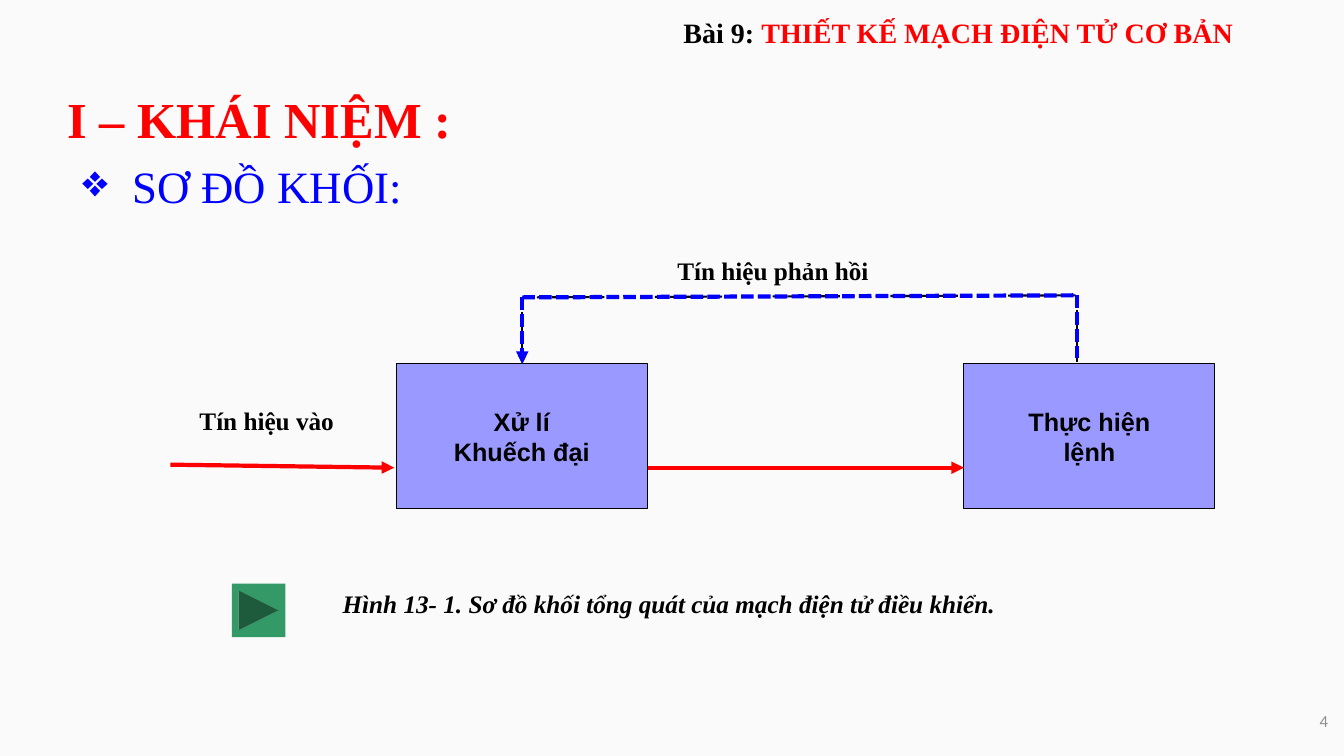
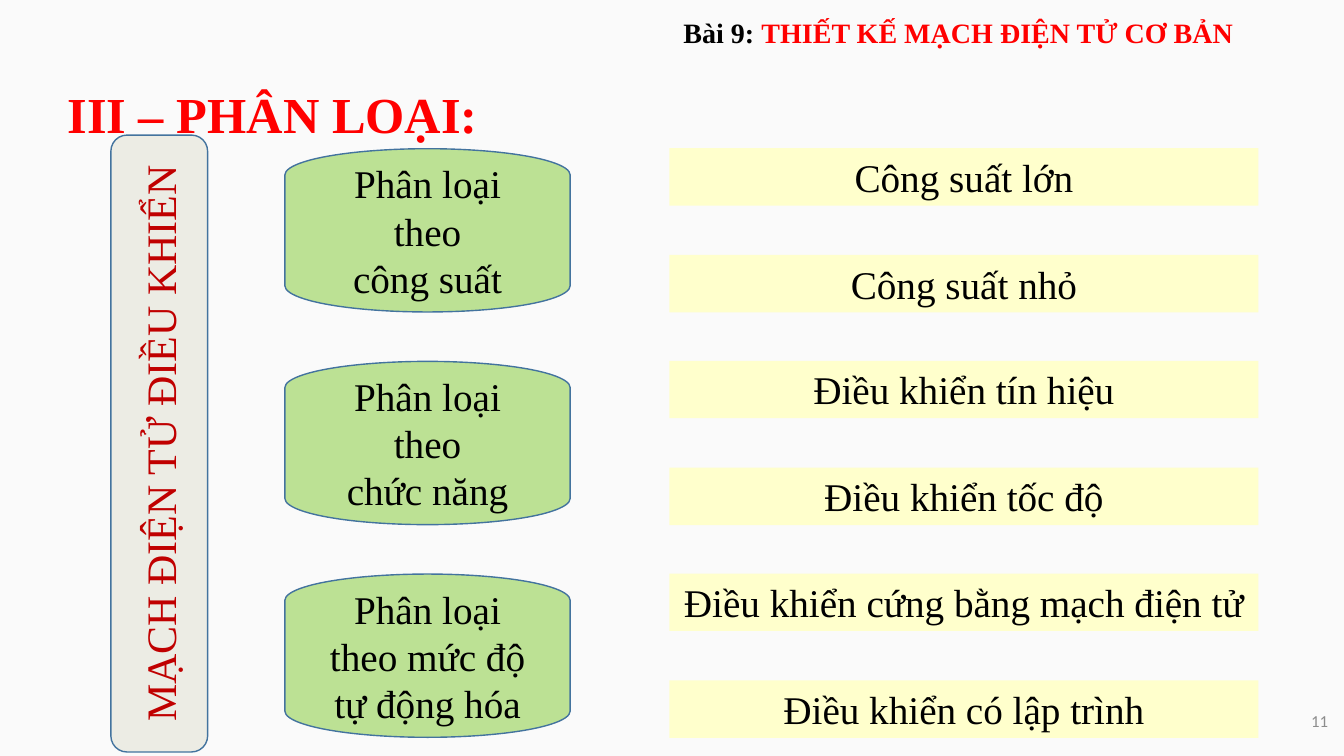
from dataclasses import dataclass

import pptx
import pptx.dml.color
import pptx.enum.dml
import pptx.enum.shapes
import pptx.enum.text
import pptx.oxml.ns
import pptx.presentation
import pptx.shapes.autoshape
import pptx.slide
import pptx.text.text
import pptx.util
from lxml import etree

RGB = pptx.dml.color.RGBColor
Pt = pptx.util.Pt
SHAPE = pptx.enum.shapes.MSO_SHAPE
ALIGN = pptx.enum.text.PP_ALIGN
ANCHOR = pptx.enum.text.MSO_ANCHOR
DASH = pptx.enum.dml.MSO_LINE
qn = pptx.oxml.ns.qn

PX = 9144  # EMU; 100 px to the inch

BACKGROUND = RGB(0xFA, 0xFA, 0xFA)
BLACK = RGB(0x00, 0x00, 0x00)
RED = RGB(0xFF, 0x00, 0x00)
DARK_RED = RGB(0xC0, 0x00, 0x00)
BLUE = RGB(0x00, 0x00, 0xFF)
GRAY = RGB(0x8C, 0x8C, 0x8C)
LAVENDER = RGB(0x99, 0x99, 0xFF)
BUTTON_GREEN = RGB(0x33, 0x99, 0x66)
LIGHT_GREEN = RGB(0xBC, 0xE1, 0x94)
STONE = RGB(0xEC, 0xEC, 0xE4)
PALE_YELLOW = RGB(0xFF, 0xFF, 0xCC)
OUTLINE_BLUE = RGB(0x43, 0x73, 0x9E)

SERIF = "Times New Roman"
TITLE = dict(name=SERIF, size=Pt(36), bold=True)
SUBTITLE = dict(name=SERIF, size=Pt(32))
LESSON = dict(name=SERIF, size=Pt(20), bold=True)
LABEL = dict(name=SERIF, size=Pt(18), bold=True)
CAPTION = LABEL | dict(italic=True)
BLOCK = dict(name="Arial", size=Pt(18), bold=True)
CLASS = dict(name=SERIF, size=Pt(28))
SUBJECT = dict(name=SERIF, size=Pt(30))
PAGE = dict(name="Calibri", size=Pt(12))


@dataclass(frozen=True)
class Box:
    left: int
    top: int
    width: int
    height: int

    def emu(self) -> list[int]:
        return [v * PX for v in (self.left, self.top, self.width, self.height)]


@dataclass(frozen=True)
class Signal:
    start: tuple[int, int]
    end: tuple[int, int]
    arrow: bool = False


@dataclass(frozen=True)
class Stroke:
    color: RGB
    width: float
    dash: DASH | None = None


@dataclass(frozen=True)
class Classification:
    basis: list[str]
    kinds: list[str]


THIN_BLACK = Stroke(BLACK, 0.75)
THIN_BLUE = Stroke(OUTLINE_BLUE, 1)
RED_SIGNAL = Stroke(RED, 3)
FEEDBACK_STROKES = [Stroke(BLACK, 1.5, DASH.DASH), Stroke(BLUE, 3, DASH.SQUARE_DOT)]

INPUT_SIGNALS = [
    Signal((169, 461), (391, 464), True),
    Signal((643, 464), (956, 464), True),
]
FEEDBACK_PATH = [
    Signal((518, 295), (1068, 293)),
    Signal((518, 295), (518, 361), True),
    Signal((1068, 293), (1068, 359)),
]
BLOCKS = [
    (Box(393, 361, 249, 144), ["Xử lí", "Khuếch đại"]),
    (Box(956, 361, 249, 144), ["Thực hiện", "lệnh"]),
]
LABELS = [
    (Box(188, 397, 188, 40), "Tín hiệu vào", LABEL),
    (Box(662, 248, 213, 40), "Tín hiệu phản hồi", LABEL),
    (Box(330, 579, 770, 40), "Hình 13- 1. Sơ đồ khối tổng quát của mạch điện tử điều khiển.", CAPTION),
]
CLASSIFICATIONS = [
    Classification(["Phân loại", "theo", "công suất"],
                   ["Công suất lớn", "Công suất nhỏ"]),
    Classification(["Phân loại", "theo", "chức năng"],
                   ["Điều khiển tín hiệu", "Điều khiển tốc độ"]),
    Classification(["Phân loại", "theo mức độ", "tự động hóa"],
                   ["Điều khiển cứng bằng mạch điện tử", "Điều khiển có lập trình"]),
]
GROUP_PITCH = 211
KIND_PITCH = 106


def add_run(paragraph: pptx.text.text._Paragraph, words: str, style: dict, color: RGB) -> None:
    run = paragraph.add_run()
    run.text = words
    for attribute, value in style.items():
        setattr(run.font, attribute, value)
    run.font.color.rgb = color


def write(frame: pptx.text.text.TextFrame, lines: list[str], style: dict, color: RGB = BLACK,
          align: ALIGN = ALIGN.LEFT, anchor: ANCHOR = ANCHOR.TOP, wrap: bool = True) -> None:
    frame.word_wrap = wrap
    frame.vertical_anchor = anchor
    for i, line in enumerate(lines):
        paragraph = frame.add_paragraph() if i else frame.paragraphs[0]
        paragraph.alignment = align
        add_run(paragraph, line, style, color)


def add_text_frame(slide: pptx.slide.Slide, box: Box) -> pptx.text.text.TextFrame:
    return slide.shapes.add_textbox(*box.emu()).text_frame


def add_figure(slide: pptx.slide.Slide, kind: SHAPE, box: Box, fill: RGB,
               outline: Stroke | None = None) -> pptx.shapes.autoshape.Shape:
    figure = slide.shapes.add_shape(kind, *box.emu())
    figure.shadow.inherit = False
    figure.fill.solid()
    figure.fill.fore_color.rgb = fill
    if outline:
        figure.line.color.rgb = outline.color
        figure.line.width = Pt(outline.width)
    else:
        figure.line.fill.background()
    return figure


def add_signal(slide: pptx.slide.Slide, signal: Signal, stroke: Stroke) -> None:
    ends = [v * PX for v in signal.start + signal.end]
    connector = slide.shapes.add_connector(pptx.enum.shapes.MSO_CONNECTOR.STRAIGHT, *ends)
    line = connector.line
    line.color.rgb = stroke.color
    line.width = Pt(stroke.width)
    if stroke.dash:
        line.dash_style = stroke.dash
    if signal.arrow:
        etree.SubElement(line._get_or_add_ln(), qn("a:tailEnd"), type="triangle")
    etree.SubElement(connector._element.spPr, qn("a:effectLst"))


def turn_text_upward(frame: pptx.text.text.TextFrame) -> None:
    frame._txBody.bodyPr.set("vert", "vert270")


def add_lesson_slide(deck: pptx.presentation.Presentation, heading: str, top: int,
                     number: str) -> pptx.slide.Slide:
    """Add a slide with its heading, the lesson name and the page number."""
    slide = deck.slides.add_slide(deck.slide_layouts[5])
    slide.background.fill.solid()
    slide.background.fill.fore_color.rgb = BACKGROUND

    title = slide.shapes.title
    title.left, title.top, title.width, title.height = Box(57, top, 1273, 71).emu()
    title.text_frame.auto_size = pptx.enum.text.MSO_AUTO_SIZE.NONE
    write(title.text_frame, [heading], TITLE, RED)

    lesson = add_text_frame(slide, Box(571, 10, 759, 44))
    write(lesson, ["Bài 9: "], LESSON, align=ALIGN.CENTER)
    add_run(lesson.paragraphs[0], "THIẾT KẾ MẠCH ĐIỆN TỬ CƠ BẢN", LESSON, RED)

    write(add_text_frame(slide, Box(1279, 695, 48, 40)), [number], PAGE, GRAY,
          ALIGN.RIGHT, ANCHOR.MIDDLE)
    return slide


def build_concept(deck: pptx.presentation.Presentation) -> None:
    slide = add_lesson_slide(deck, "I – KHÁI NIỆM :", 82, "4")

    subtitle = add_text_frame(slide, Box(72, 153, 1197, 64))
    properties = subtitle.paragraphs[0]._p.get_or_add_pPr()
    properties.set("marL", str(50 * PX))
    properties.set("indent", str(-50 * PX))
    etree.SubElement(properties, qn("a:buChar"), char="❖")
    write(subtitle, ["SƠ ĐỒ KHỐI:"], SUBTITLE, BLUE)

    for box, words, style in LABELS:
        write(add_text_frame(slide, box), [words], style)
    for box, lines in BLOCKS:
        block = add_figure(slide, SHAPE.RECTANGLE, box, LAVENDER, THIN_BLACK)
        write(block.text_frame, lines, BLOCK, align=ALIGN.CENTER,
              anchor=ANCHOR.MIDDLE, wrap=False)
    for signal in INPUT_SIGNALS:
        add_signal(slide, signal, RED_SIGNAL)
    for stroke in FEEDBACK_STROKES:
        for signal in FEEDBACK_PATH:
            add_signal(slide, signal, stroke)
    add_figure(slide, SHAPE.ACTION_BUTTON_FORWARD_OR_NEXT, Box(230, 579, 53, 53), BUTTON_GREEN)


def build_classification(deck: pptx.presentation.Presentation) -> None:
    slide = add_lesson_slide(deck, "III – PHÂN LOẠI:", 77, "11")

    subject = add_figure(slide, SHAPE.ROUNDED_RECTANGLE, Box(110, 134, 96, 612), STONE, THIN_BLUE)
    write(subject.text_frame, ["MẠCH ĐIỆN TỬ ĐIỀU KHIỂN"], SUBJECT, DARK_RED,
          ALIGN.CENTER, ANCHOR.MIDDLE)
    turn_text_upward(subject.text_frame)

    for group, classification in enumerate(CLASSIFICATIONS):
        offset = group * GROUP_PITCH
        basis = add_figure(slide, SHAPE.FLOWCHART_TERMINATOR, Box(343, 87 + offset, 162, 283),
                           LIGHT_GREEN, THIN_BLUE)
        basis.rotation = 90
        frame = basis.text_frame
        for side in ("left", "top", "right", "bottom"):
            setattr(frame, f"margin_{side}", 0)
        write(frame, classification.basis, CLASS, align=ALIGN.CENTER,
              anchor=ANCHOR.MIDDLE, wrap=False)
        turn_text_upward(frame)

        for row, words in enumerate(classification.kinds):
            box = Box(664, 147 + offset + row * KIND_PITCH, 584, 57)
            kind = add_figure(slide, SHAPE.RECTANGLE, box, PALE_YELLOW)
            write(kind.text_frame, [words], CLASS, align=ALIGN.CENTER)


def main() -> None:
    deck = pptx.Presentation()
    deck.slide_width = 1333 * PX
    deck.slide_height = 750 * PX
    build_concept(deck)
    build_classification(deck)
    deck.save("out.pptx")


if __name__ == "__main__":
    main()
